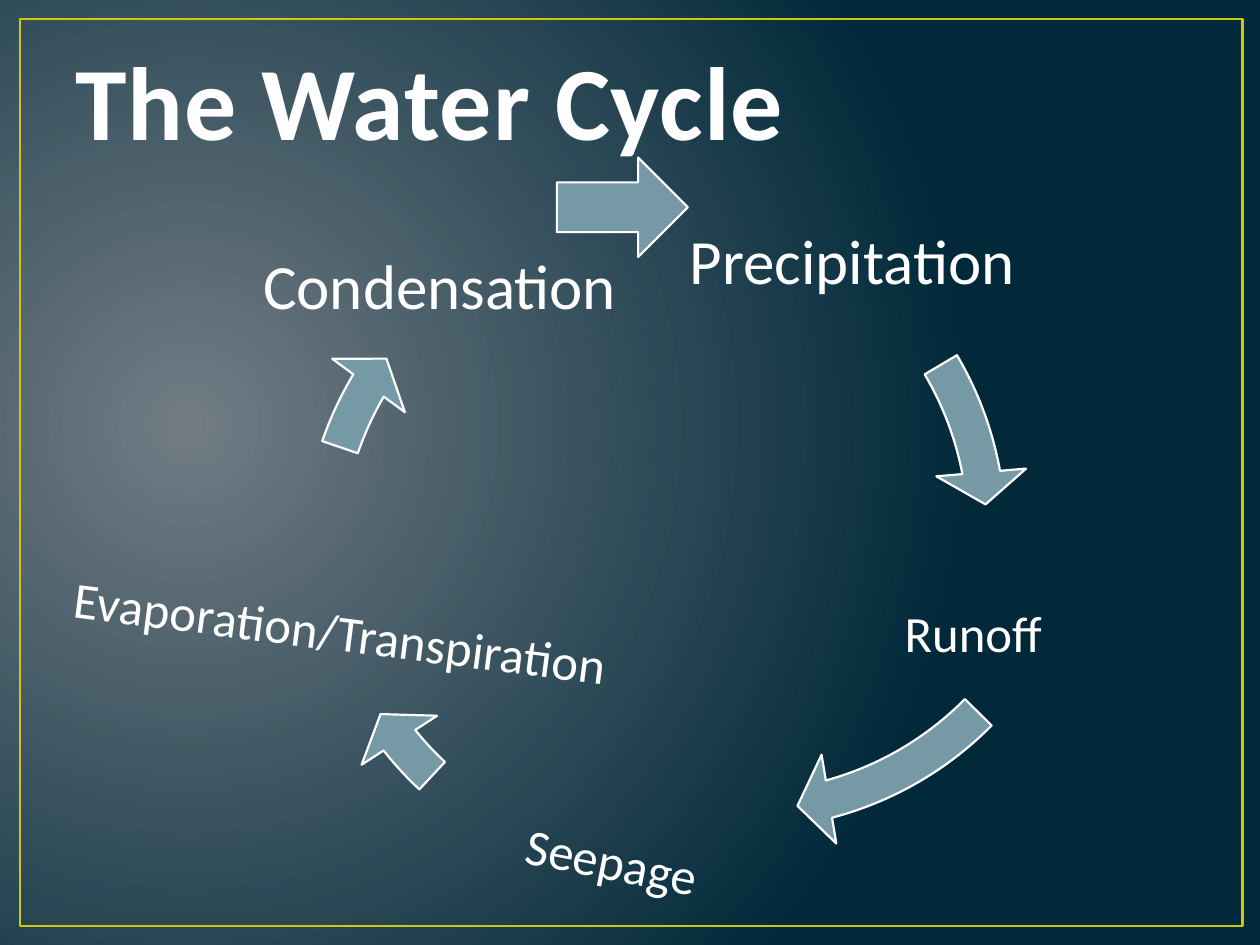
import dataclasses

import lxml.etree
import pptx
import pptx.dml.color
import pptx.enum.shapes
import pptx.enum.text
import pptx.oxml
import pptx.oxml.ns
import pptx.util

Shape = pptx.enum.shapes.MSO_SHAPE
Anchor = pptx.enum.text.MSO_ANCHOR
Align = pptx.enum.text.PP_ALIGN


@dataclasses.dataclass(frozen=True)
class Theme:
    font: str = "Calibri"
    glow: str = "717C84"
    deep: str = "01293A"
    border: str = "CFC60D"
    arrow: str = "759AA5"
    text: str = "FFFFFF"
    heading: str = "FEFEFE"
    title_size: float = 59.4
    large_size: float = 36
    small_size: float = 29
    border_width: float = 1.5
    arrow_width: float = 1.25


class CycleSlide:
    COLUMNS, ROWS = 100, 75
    RING = 59.6

    def __init__(self, deck, theme):
        self.theme = theme
        self.cell_width = deck.slide_width / self.COLUMNS
        self.cell_height = deck.slide_height / self.ROWS
        self.slide = deck.slides.add_slide(deck.slide_layouts[6])

    def color(self, value):
        return pptx.dml.color.RGBColor.from_string(value)

    def place(self, column, row, columns, rows):
        return (round(column * self.cell_width), round(row * self.cell_height),
                round(columns * self.cell_width), round(rows * self.cell_height))

    def background(self):
        fill = self.slide.background.fill
        fill.gradient()
        for stop, value in zip(fill.gradient_stops, (self.theme.glow, self.theme.deep)):
            stop.color.rgb = self.color(value)
        linear = next(self.slide.element.iter(pptx.oxml.ns.qn("a:lin")))
        radial = pptx.oxml.parse_xml(
            f'<a:path {pptx.oxml.ns.nsdecls("a")} path="circle">'
            '<a:fillToRect l="15000" t="50000" r="85000" b="60000"/></a:path>')
        linear.getparent().replace(linear, radial)

    def outline(self, shape, value, width):
        shape.shadow.inherit = False
        shape.line.color.rgb = self.color(value)
        shape.line.width = pptx.util.Pt(width)

    def border(self, *cells):
        frame = self.slide.shapes.add_shape(Shape.RECTANGLE, *self.place(*cells))
        frame.fill.background()
        self.outline(frame, self.theme.border, self.theme.border_width)

    def text(self, words, cells, size, value, anchor, bold=False):
        box = self.slide.shapes.add_textbox(*self.place(*cells))
        frame = box.text_frame
        frame.word_wrap = True
        frame.vertical_anchor = anchor
        frame.text = words
        font = frame.paragraphs[0].runs[0].font
        font.name = self.theme.font
        font.size = pptx.util.Pt(size)
        font.bold = bold
        font.color.rgb = self.color(value)
        return box

    def title(self, words, cells):
        heading = self.text(words, cells, self.theme.title_size,
                            self.theme.heading, Anchor.BOTTOM, bold=True)
        run = heading.text_frame.paragraphs[0].runs[0]
        run.font._element.set("spc", "50")

    def stage(self, words, cells, size, rotation=0):
        label = self.text(words, cells, size, self.theme.text, Anchor.MIDDLE)
        label.rotation = rotation
        frame = label.text_frame
        inset = pptx.util.Pt(size / 10)
        frame.margin_left = frame.margin_right = inset
        frame.margin_top = frame.margin_bottom = inset
        frame.paragraphs[0].alignment = Align.CENTER
        frame.paragraphs[0].line_spacing = 0.9

    def arrow(self, kind, cells, rotation=0):
        arrow = self.slide.shapes.add_shape(kind, *self.place(*cells))
        arrow.rotation = rotation
        arrow.fill.solid()
        arrow.fill.fore_color.rgb = self.color(self.theme.arrow)
        self.outline(arrow, self.theme.text, self.theme.arrow_width)
        return arrow

    def arc(self, column, row, start, end, rotation=0):
        arc = self.arrow(Shape.CIRCULAR_ARROW,
                         (column, row, self.RING, self.RING), rotation)
        degree = 60000 / 100000
        settings = (0.05, 5.59 * degree, end * degree, start * degree, 0.06)
        for index, setting in enumerate(settings):
            arc.adjustments[index] = setting


def main():
    deck = pptx.Presentation()
    deck.slide_width = pptx.util.Inches(10)
    deck.slide_height = pptx.util.Inches(7.5)
    theme = Theme()
    cycle = CycleSlide(deck, theme)

    cycle.background()
    cycle.border(1.6, 1.5, 97, 72)
    cycle.title("The Water Cycle", (5, 3, 90, 10.3))

    stages = (
        ("Precipitation", (47, 13, 41.3, 15.9), theme.large_size, 0),
        ("Runoff", (56.4, 40, 41.7, 20.9), theme.small_size, 0),
        ("Seepage", (40.6, 60.6, 15.9, 15.9), theme.small_size, 11.2),
        ("Evaporation/Transpiration", (2.7, 38.3, 48.5, 24.2), theme.small_size, 7.3),
        ("Condensation", (19.2, 15, 31.4, 15.9), theme.large_size, 0),
    )
    for stage in stages:
        cycle.stage(*stage)

    arcs = (
        (22.3, 12.5, 329.41, 349.46, 0),
        (29.2, 8.3, 44.68, 74.98, 0),
        (22.4, 12.6, 116.14, 124.52, 16.9),
        (22, 14.2, 192.32, 204.13, 6.6),
    )
    for arc in arcs:
        cycle.arc(*arc)
    cycle.arrow(Shape.RIGHT_ARROW, (44.2, 12.5, 10.4, 7.9))

    deck.save("out.pptx")


if __name__ == "__main__":
    main()
